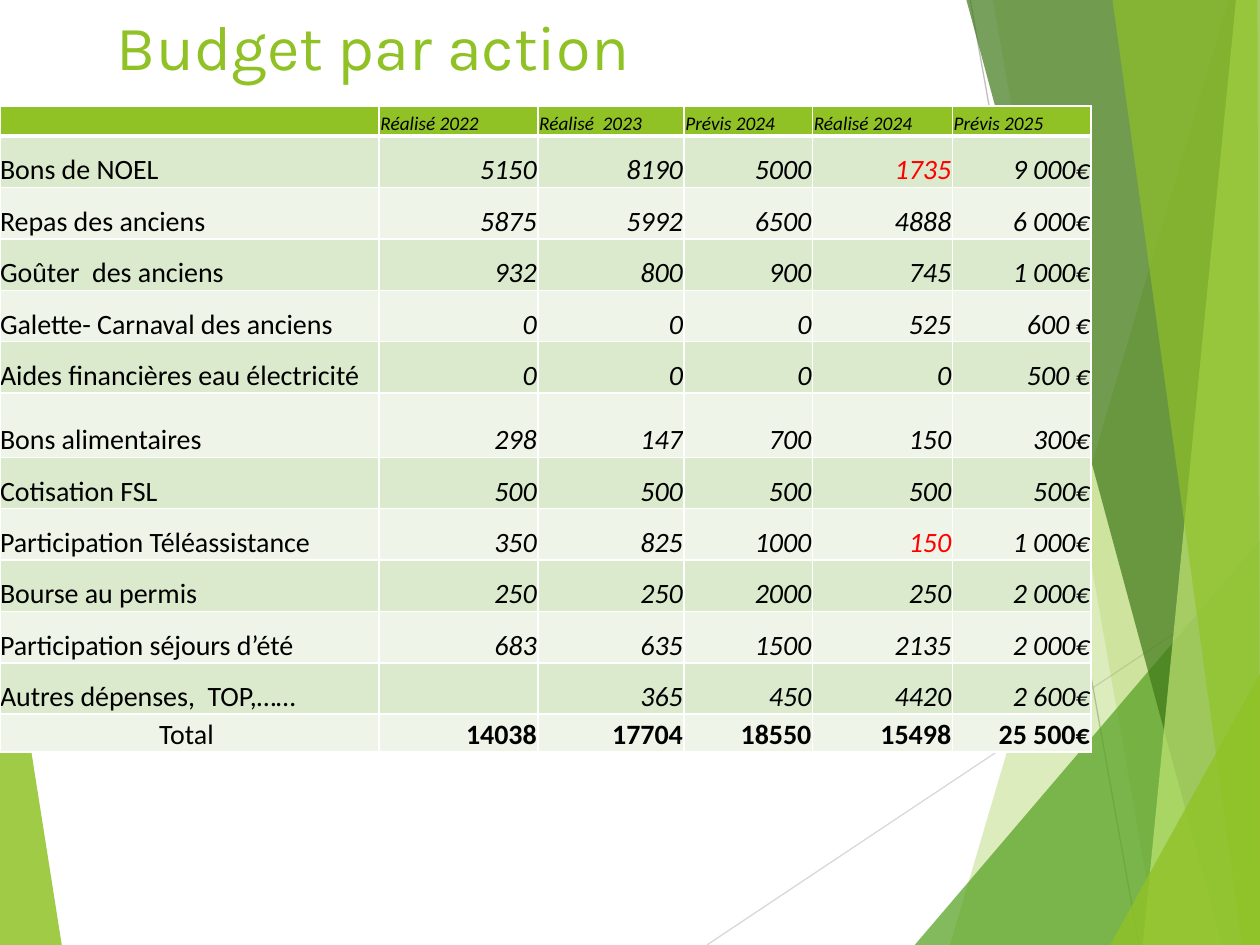
import pptx
import pptx.util
import pptx.dml.color
import pptx.enum.shapes
import pptx.enum.text
import pptx.oxml.ns
import lxml.etree

WIDE, HIGH = pptx.util.Inches(10), pptx.util.Inches(7.5)
ALIGN = pptx.enum.text.PP_ALIGN
ANCHOR = pptx.enum.text.MSO_ANCHOR
HUES = {
    "lime": "90C226", "green": "54A021", "dark": "3F7819", "pale": "C0E474",
    "silver": "D9D9D9", "grey": "BFBFBF", "white": "FFFFFF", "black": "000000",
    "red": "FF0000", "band": "DBE9CD", "light": "EEF4E8",
}

# Facets: hue, opacity, corners as percent of slide width and height
FACETS = [
    ("lime", 85, [(0, 58.5), (4.9, 100), (0, 100)]),
    ("lime", 30, [(97.5, 0), (75.4, 100), (100, 100), (100, 0)]),
    ("lime", 20, [(78.8, 0), (91.9, 100), (100, 100), (100, 0)]),
    ("green", 72, [(72.6, 100), (100, 57.2), (100, 100)]),
    ("dark", 70, [(76.7, 0), (97, 100), (100, 100), (100, 0)]),
    ("pale", 70, [(98.1, 0), (90.7, 100), (100, 100), (100, 0)]),
    ("lime", 65, [(88.3, 0), (98.6, 100), (100, 100), (99.8, 0)]),
    ("lime", 80, [(88.1, 100), (100, 71.3), (100, 100)]),
]
LINES = [("silver", (56.1, 100), (100, 61)), ("grey", (77, 0), (90.4, 100))]

# Table: column widths and row heights in percent of the slide
COLS = [30.1, 12.6, 11.6, 10.2, 11.1, 11]
HEAD, TALL, LAST, FULL = 3.2, 6.8, 4, 68.4
ROWS = [
    ["", "Réalisé 2022", "Réalisé  2023", "Prévis 2024", "Réalisé 2024", "Prévis 2025"],
    ["Bons de NOEL", "5150", "8190", "5000", "1735", "9 000€"],
    ["Repas des anciens", "5875", "5992", "6500", "4888", "6 000€"],
    ["Goûter  des anciens", "932", "800", "900", "745", "1 000€"],
    ["Galette- Carnaval des anciens", "0", "0", "0", "525", "600 €"],
    ["Aides financières eau électricité", "0", "0", "0", "0", "500 €"],
    ["Bons alimentaires", "298", "147", "700", "150", "300€"],
    ["Cotisation FSL", "500", "500", "500", "500", "500€"],
    ["Participation Téléassistance", "350", "825", "1000", "150", "1 000€"],
    ["Bourse au permis", "250", "250", "2000", "250", "2 000€"],
    ["Participation séjours d’été", "683", "635", "1500", "2135", "2 000€"],
    ["Autres dépenses,  TOP,……", "", "365", "450", "4420", "2 600€"],
    ["Total ", "14038", "17704", "18550", "15498", "25 500€"],
]
TALL_ROW, END = 6, len(ROWS) - 1
ALERTS = {(1, 4), (8, 4)}


def across(share):
    return int(WIDE * share / 100)


def down(share):
    return int(HIGH * share / 100)


def color(name):
    return pptx.dml.color.RGBColor.from_string(HUES[name])


def child(node, tag, **attrs):
    return lxml.etree.SubElement(node, pptx.oxml.ns.qn(tag), **attrs)


def paint(fill, hue):
    fill.solid()
    fill.fore_color.rgb = color(hue)


def style(item, form):
    for key, value in form.items():
        setattr(item, key, value)


def write(para, text, hue, form):
    run = para.add_run()
    run.text = text
    style(run.font, form)
    run.font.color.rgb = color(hue)


def facet(slide, hue, alpha, corners):
    points = [(across(x), down(y)) for x, y in corners]
    maker = slide.shapes.build_freeform(*points[0])
    maker.add_line_segments(points[1:], close=True)
    shape = maker.convert_to_shape()
    shape.shadow.inherit = False
    shape.line.fill.background()
    paint(shape.fill, hue)
    tint = shape._element.spPr.find(".//" + pptx.oxml.ns.qn("a:srgbClr"))
    child(tint, "a:alpha", val=str(alpha * 1000))


def line(slide, hue, start, stop):
    kind = pptx.enum.shapes.MSO_CONNECTOR.STRAIGHT
    link = slide.shapes.add_connector(
        kind, across(start[0]), down(start[1]), across(stop[0]), down(stop[1]))
    link.line.color.rgb = color(hue)
    link.line.width = pptx.util.Pt(0.75)
    child(link._element.spPr, "a:effectLst")


def title(slide, text):
    box = slide.shapes.add_textbox(across(8.3), down(0.1), across(74.2), down(13))
    style(box.text_frame, {"word_wrap": True, "vertical_anchor": ANCHOR.TOP})
    write(box.text_frame.paragraphs[0], text, "lime",
          {"name": "Karla", "size": pptx.util.Pt(36)})


def border(cell, row):
    props = cell._tc.get_or_add_tcPr()
    for side in "LRTB":
        thick = (row, side) in {(0, "B"), (1, "T")}
        edge = child(props, "a:ln" + side, w=str(pptx.util.Pt(3 if thick else 1)))
        child(child(edge, "a:solidFill"), "a:srgbClr", val=HUES["white"])


def fill_cell(cell, row, col, text):
    border(cell, row)
    paint(cell.fill, "lime" if row == 0 else "band" if row % 2 else "light")
    inset = pptx.util.Inches(0.01 if col or row == 0 else 0)
    style(cell, {"margin_left": inset, "margin_right": inset, "margin_top": inset,
                 "margin_bottom": 0, "vertical_anchor": ANCHOR.BOTTOM})
    para = cell.text_frame.paragraphs[0]
    size = pptx.util.Pt(11 if row == 0 else 16)
    if not text:
        para._p.get_or_add_endParaRPr().set("sz", str(int(size.pt * 100)))
        return
    if row and col:
        para.alignment = ALIGN.RIGHT
    else:
        para.alignment = ALIGN.CENTER if row == END else ALIGN.LEFT
    write(para, text, "red" if (row, col) in ALERTS else "black", {
        "name": "Calibri", "size": size,
        "bold": row == END and col > 0, "italic": row != END and col > 0})


def budget(slide):
    frame = slide.shapes.add_table(
        len(ROWS), len(COLS), 0, down(11.2), across(sum(COLS)), down(FULL))
    table = frame.table
    for col, share in enumerate(COLS):
        table.columns[col].width = across(share)
    # Plain rows share what the three special rows leave
    plain = (FULL - HEAD - TALL - LAST) / (len(ROWS) - 3)
    special = {0: HEAD, TALL_ROW: TALL, END: LAST}
    for row, texts in enumerate(ROWS):
        table.rows[row].height = down(special.get(row, plain))
        for col, text in enumerate(texts):
            fill_cell(table.cell(row, col), row, col, text)


def main():
    deck = pptx.Presentation()
    deck.slide_width, deck.slide_height = WIDE, HIGH
    slide = deck.slides.add_slide(deck.slide_layouts[6])
    # Backdrop: left facet, thin lines, then right facets
    facet(slide, *FACETS[0])
    for item in LINES:
        line(slide, *item)
    for item in FACETS[1:]:
        facet(slide, *item)
    # Content
    title(slide, "Budget par action")
    budget(slide)
    deck.save("out.pptx")


if __name__ == "__main__":
    main()
